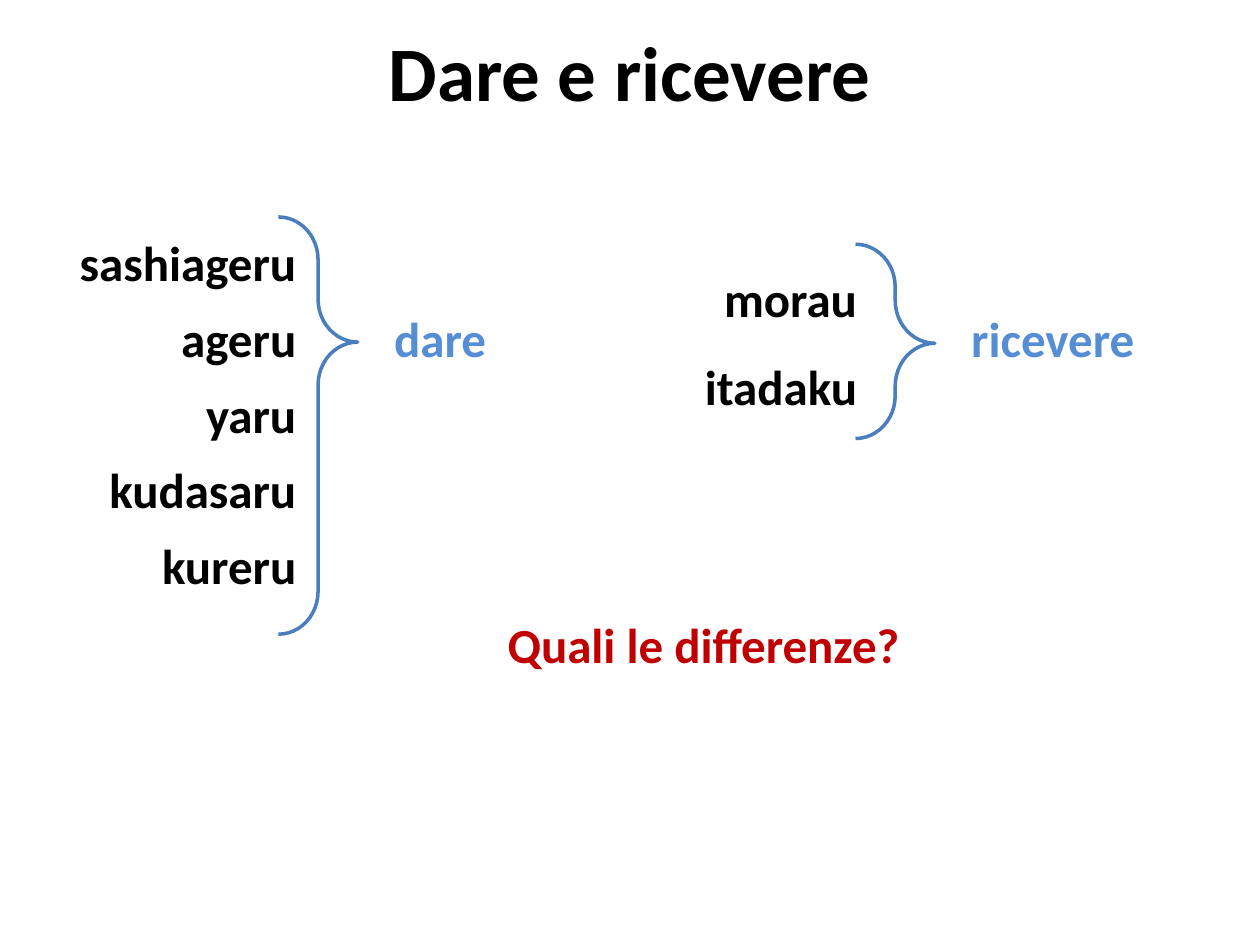
"""Build the slide on the Japanese verbs of giving and receiving."""
from dataclasses import dataclass

from pptx import Presentation, util as u
from pptx.dml.color import RGBColor
from pptx.enum import shapes, text


@dataclass(frozen=True)
class Theme:
    font: str = "Calibri"
    title_size: int = 44
    body_size: int = 28
    ink: str = "000000"
    meaning: str = "558ED5"
    question: str = "C00000"
    brace: str = "4B7EBC"
    brace_width: int = 2


theme = Theme()
deck = Presentation()
deck.slide_width, deck.slide_height = u.Inches(10), u.Inches(7.5)
column, row = deck.slide_width / 100, deck.slide_height * 0.08
slide = deck.slides.add_slide(deck.slide_layouts[5])


def area(left, top, width, height):
    return [round(v) for v in (left * column, top * row, width * column, height * row)]


def write(holder, words, size, color, align):
    frame = holder.text_frame
    frame.text = words
    paragraph = frame.paragraphs[0]
    paragraph.alignment = align
    font = paragraph.runs[0].font
    font.name, font.size, font.bold = theme.font, u.Pt(size), True
    font.color.rgb = RGBColor.from_string(color)
    return frame


title = slide.shapes.title
title.left, title.top, title.width, title.height = area(5, 0.22, 90, 1.42)
heading = write(title, "Dare e ricevere", theme.title_size, theme.ink, text.PP_ALIGN.CENTER)
heading.vertical_anchor = text.MSO_ANCHOR.MIDDLE

line_height = 0.95
giving = [("sashiageru", 19.4), ("ageru", 11.3), ("yaru", 9.3), ("kudasaru", 17), ("kureru", 12.8)]
receiving = [("morau", 12.7), ("itadaku", 14.3)]
groups = [
    (giving, 24.5, 3, 1, ("dare", 30.3, 9.4), (22.1, 2.87, 5.52), 0.3),
    (receiving, 69, 3.47, 1.17, ("ricevere", 76.1, 15.1), (67.9, 3.23, 2.57), 0.51),
]
labels = [("Quali le differenze?", 39.3, 8.05, 33.6, theme.question, text.PP_ALIGN.LEFT)]

for verbs, right, first, step, meaning, (left, top, height), point in groups:
    for index, (verb, width) in enumerate(verbs):
        labels.append((verb, right - width, first + index * step, width,
                       theme.ink, text.PP_ALIGN.RIGHT))
    word, start, width = meaning
    labels.append((word, start, 4, width, theme.meaning, text.PP_ALIGN.LEFT))
    brace = slide.shapes.add_shape(shapes.MSO_SHAPE.RIGHT_BRACE, *area(left, top, 6.3, height))
    brace.adjustments[0], brace.adjustments[1] = 0.54, point
    brace.shadow.inherit = False
    brace.fill.background()
    brace.line.color.rgb = RGBColor.from_string(theme.brace)
    brace.line.width = u.Pt(theme.brace_width)

for words, left, top, width, color, align in labels:
    box = slide.shapes.add_textbox(*area(left, top, width, line_height))
    label = write(box, words, theme.body_size, color, align)
    label.word_wrap = False
    label.auto_size = text.MSO_AUTO_SIZE.SHAPE_TO_FIT_TEXT

deck.save("out.pptx")
